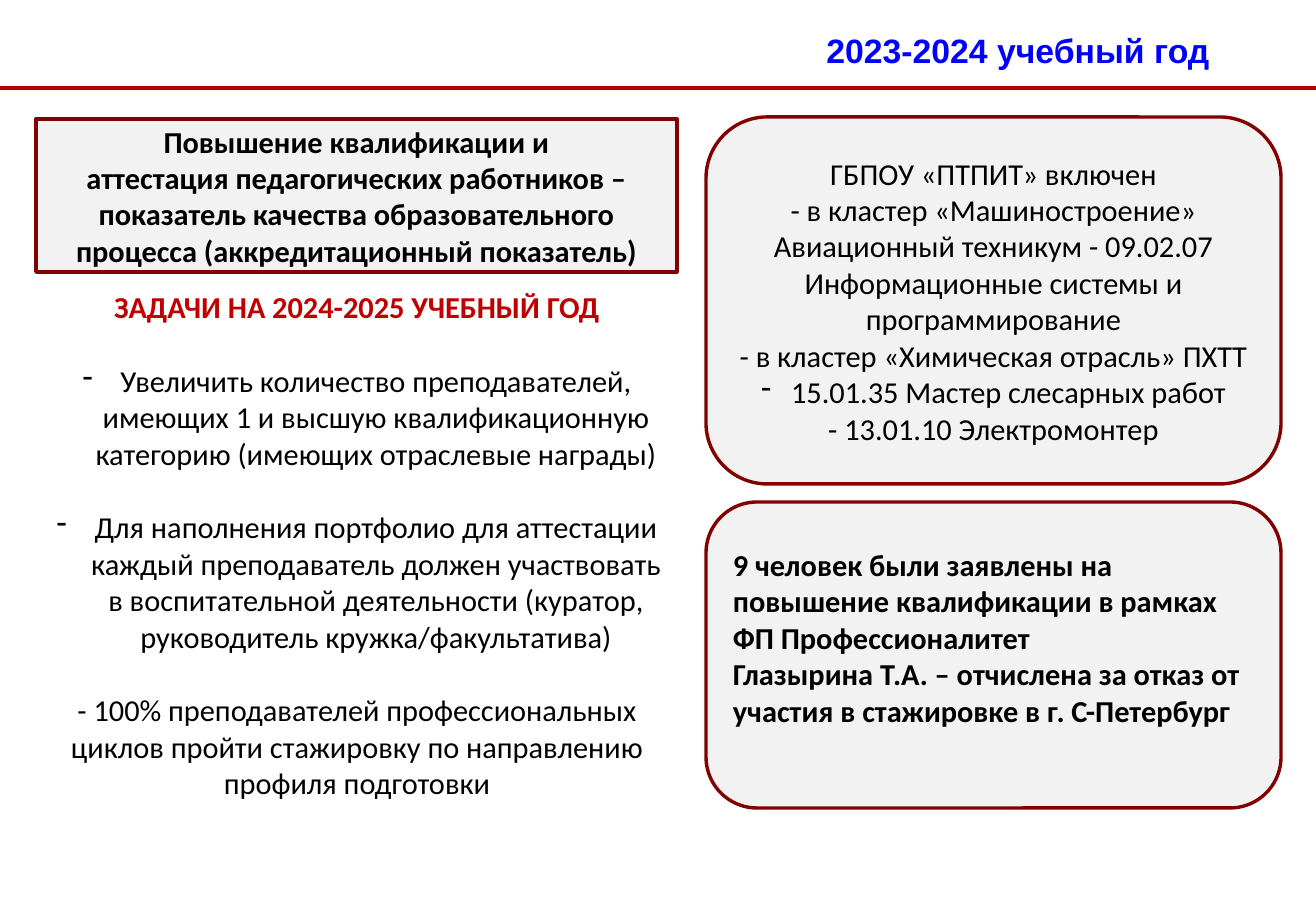
from lxml import etree
from pptx import Presentation
from pptx import util as u
from pptx.dml.color import RGBColor
from pptx.enum import shapes, text
from pptx.oxml.ns import qn

PX = 914400 / 121.5
COLORS = {"rule": "B00000", "border": "820000", "panel": "F2F2F2", "white": "FFFFFF",
          "title": "0000FF", "tasks": "C00000", "ink": "000000"}
ALIGN = {"l": text.PP_ALIGN.LEFT, "c": text.PP_ALIGN.CENTER, "r": text.PP_ALIGN.RIGHT}


def px(n):
    return u.Emu(round(n * PX))


def color(name):
    return RGBColor.from_string(COLORS[name])


def write(tf, content, first=False, size=18, font="Calibri", ink="ink", bold=False,
          align="c", before=0, hang=0):
    p = tf.paragraphs[0] if first else tf.add_paragraph()
    p.alignment = ALIGN[align]
    p.space_before = u.Pt(before)
    if hang:
        pPr = p._p.get_or_add_pPr()
        pPr.set("marL", str(px(hang)))
        pPr.set("indent", str(-px(hang)))
        etree.SubElement(pPr, qn("a:buChar")).set("char", "-")
    r = p.add_run()
    r.text = content
    r.font.size, r.font.name, r.font.bold = u.Pt(size), font, bold
    r.font.color.rgb = color(ink)


class Deck:
    """Holds the house style and the current slide."""

    def __init__(self, width, height):
        self.prs = Presentation()
        self.prs.slide_width, self.prs.slide_height = px(width), px(height)
        self.s = self.prs.slides.add_slide(self.prs.slide_layouts[5])

    def title(self, content, x, y, w, h):
        sp = self.s.shapes.title
        sp.left, sp.top, sp.width, sp.height = map(px, (x, y, w, h))
        tf = sp.text_frame
        tf.vertical_anchor = text.MSO_ANCHOR.TOP
        write(tf, content, first=True, size=20, font="Arial", ink="title", bold=True, align="r")

    def rule(self, y):
        ln = self.s.shapes.add_connector(shapes.MSO_CONNECTOR.STRAIGHT, 0, px(y),
                                         self.prs.slide_width, px(y))
        ln.line.color.rgb = color("rule")
        ln.line.width = u.Pt(2.5)
        etree.SubElement(ln._element.spPr, qn("a:effectLst"))

    def panel(self, x, y, w, h, items, rounded=False, fill="panel", border="border", bottom=6):
        kind = shapes.MSO_SHAPE.ROUNDED_RECTANGLE if rounded else shapes.MSO_SHAPE.RECTANGLE
        sp = self.s.shapes.add_shape(kind, *map(px, (x, y, w, h)))
        sp.shadow.inherit = False
        sp.fill.solid()
        sp.fill.fore_color.rgb = color(fill)
        if border:
            sp.line.color.rgb = color(border)
            sp.line.width = u.Pt(2)
        else:
            sp.line.fill.background()
        tf = sp.text_frame
        tf.word_wrap = True
        tf.vertical_anchor = text.MSO_ANCHOR.MIDDLE
        tf.margin_bottom = px(bottom)
        for i, (content, fmt) in enumerate(items):
            write(tf, content, first=i == 0, **fmt)


def main():
    deck = Deck(1316, 909)
    deck.rule(88)
    deck.title("2023-2024 учебный год", 26, 24, 1196, 126)

    deck.panel(706, 117, 575, 367, [
        ("ГБПОУ «ПТПИТ» включен", {}),
        ("- в кластер «Машиностроение»", {}),
        ("Авиационный техникум - 09.02.07 Информационные системы и программирование", {}),
        ("- в кластер «Химическая отрасль» ПХТТ", {}),
        ("15.01.35 Мастер слесарных работ", {"hang": 30}),
        ("- 13.01.10 Электромонтер", {}),
    ], rounded=True)

    strong_left = {"bold": True, "align": "l"}
    deck.panel(706, 502, 575, 306, [
        ("9 человек были заявлены на повышение квалификации в рамках ФП Профессионалитет",
         strong_left),
        ("Глазырина Т.А. – отчислена за отказ от участия в стажировке в г. С-Петербург",
         strong_left),
    ], rounded=True, bottom=42)

    task = {"before": 22, "hang": 38}
    deck.panel(36, 205, 642, 679, [
        ("ЗАДАЧИ НА 2024-2025 УЧЕБНЫЙ ГОД", {"ink": "tasks", "bold": True}),
        ("Увеличить количество преподавателей, имеющих 1 и высшую квалификационную "
         "категорию (имеющих отраслевые награды)", task),
        ("Для наполнения портфолио для аттестации каждый преподаватель должен участвовать "
         "в воспитательной деятельности (куратор, руководитель кружка/факультатива)", task),
        ("- 100% преподавателей профессиональных циклов пройти стажировку по направлению "
         "профиля подготовки", {"before": 22}),
    ], fill="white", border=None)

    deck.panel(36, 119, 641, 153, [
        ("Повышение квалификации и", {"bold": True}),
        ("аттестация педагогических работников – показатель качества образовательного "
         "процесса (аккредитационный показатель)", {"bold": True}),
    ])
    deck.prs.save("out.pptx")


if __name__ == "__main__":
    main()
